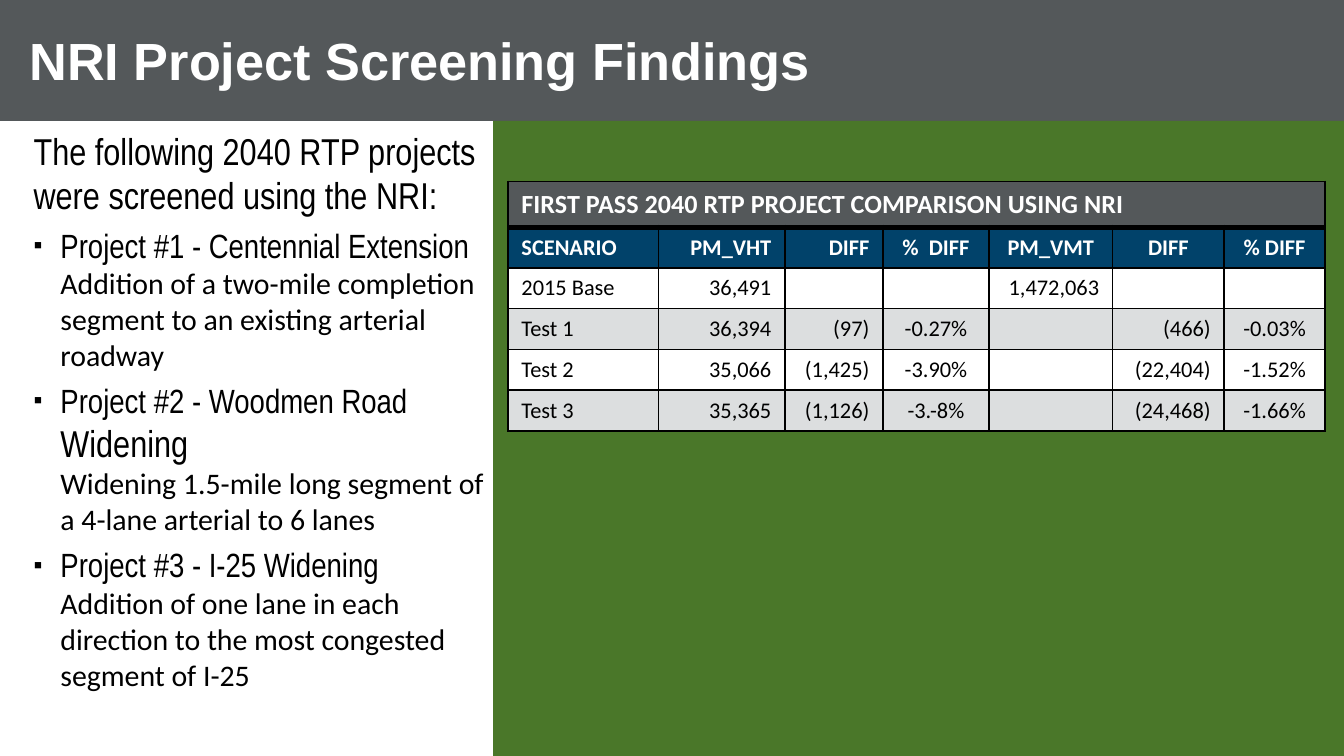
from lxml import etree
from pptx import Presentation
from pptx import util as u
from pptx.dml import color
from pptx.enum import shapes, text
from pptx.oxml import ns

COLORS = {
    "slate": "54585A",
    "green": "4A7729",
    "navy": "01426A",
    "band": "DCDEDF",
    "white": "FFFFFF",
    "black": "000000",
}
LEFT, CENTER, RIGHT = text.PP_ALIGN.LEFT, text.PP_ALIGN.CENTER, text.PP_ALIGN.RIGHT

INTRO = "The following 2040 RTP projects were screened using the NRI:"
FINDINGS = [
    ("intro", [(INTRO, 20, "Arial Narrow")]),
    ("bullet", [
        ("Project #1 - Centennial Extension ", 18, "Arial Narrow"),
        ("Addition of a two-mile completion segment to an existing arterial roadway", 16, "Calibri"),
    ]),
    ("bullet", [
        ("Project #2 - Woodmen Road ", 18, "Arial Narrow"),
        ("Widening", 20, "Arial Narrow"),
    ]),
    ("detail", [("Widening 1.5-mile long segment of a 4-lane arterial to 6 lanes", 16, "Calibri")]),
    ("bullet", [
        ("Project #3 - I-25 Widening ", 18, "Arial Narrow"),
        ("\n", 18, "Arial Narrow"),
        ("Addition of one lane in each direction to the most congested segment of I-25", 16, "Calibri"),
    ]),
]

TABLE_TITLE = "FIRST PASS 2040 RTP PROJECT COMPARISON USING NRI"
HEADERS = ["SCENARIO", "PM_VHT", "DIFF", "%  DIFF", "PM_VMT", "DIFF", "% DIFF"]
SCENARIOS = [
    ["2015 Base", "36,491", "", "", "1,472,063", "", ""],
    ["Test 1", "36,394", "(97)", "-0.27%", "", "(466)", "-0.03%"],
    ["Test 2", "35,066", "(1,425)", "-3.90%", "", "(22,404)", "-1.52%"],
    ["Test 3", "35,365", "(1,126)", "-3.-8%", "", "(24,468)", "-1.66%"],
]
COLUMN_WIDTHS = [1.12, 0.94, 0.73, 0.79, 0.92, 0.83, 0.75]
HEADER_ALIGNS = [LEFT, RIGHT, RIGHT, CENTER, CENTER, CENTER, CENTER]
VALUE_ALIGNS = [LEFT, RIGHT, RIGHT, CENTER, RIGHT, RIGHT, CENTER]


class SlideBuilder:
    def __init__(self, slide):
        self.slide = slide

    def paint(self, fill, name):
        fill.solid()
        fill.fore_color.rgb = color.RGBColor.from_string(COLORS[name])

    def style(self, span, size, font, name, bold=False):
        span.font.size = u.Pt(size)
        span.font.name = font
        span.font.bold = bold
        span.font.color.rgb = color.RGBColor.from_string(COLORS[name])

    def panel(self, left, top, width, height, name, behind=False):
        box = self.slide.shapes.add_shape(
            shapes.MSO_SHAPE.RECTANGLE, *map(u.Inches, (left, top, width, height)))
        self.paint(box.fill, name)
        box.line.fill.background()
        box.shadow.inherit = False
        if behind:
            box.element.getparent().insert(2, box.element)

    def place(self, box, left, top, width, height, anchor):
        box.left, box.top, box.width, box.height = map(u.Inches, (left, top, width, height))
        frame = box.text_frame
        frame.word_wrap = True
        frame.auto_size = text.MSO_AUTO_SIZE.NONE
        frame.vertical_anchor = anchor
        frame.margin_left = frame.margin_right = u.Inches(0.25)
        frame.margin_top = frame.margin_bottom = u.Inches(0.05)
        return frame

    def title(self, wording, *area):
        frame = self.place(self.slide.shapes.title, *area, text.MSO_ANCHOR.BOTTOM)
        frame.text = wording
        para = frame.paragraphs[0]
        para.alignment = LEFT
        para.line_spacing = u.Pt(28)
        self.style(para.runs[0], 28, "Arial", "white", True)

    def bullets(self, items, *area):
        frame = self.place(self.slide.placeholders[1], *area, text.MSO_ANCHOR.TOP)
        for index, (kind, spans) in enumerate(items):
            para = frame.add_paragraph() if index else frame.paragraphs[0]
            para.alignment = LEFT
            para.level = 1 if kind == "detail" else 0
            para.space_before = u.Pt(4 if kind == "bullet" else 0)
            self.indent(para, kind)
            for wording, size, font in spans:
                if wording == "\n":
                    para.add_line_break()
                    continue
                span = para.add_run()
                span.text = wording
                self.style(span, size, font, "black")

    def indent(self, para, kind):
        props = para._p.get_or_add_pPr()
        props.set("marL", str(0 if kind == "intro" else u.Inches(0.2)))
        props.set("indent", str(u.Inches(-0.2) if kind == "bullet" else 0))
        if kind == "bullet":
            etree.SubElement(props, ns.qn("a:buSzPct"), val="75000")
            etree.SubElement(props, ns.qn("a:buFont"), typeface="Arial")
            etree.SubElement(props, ns.qn("a:buChar"), char="▪")
        else:
            etree.SubElement(props, ns.qn("a:buNone"))

    def borders(self, cell, top, bottom):
        props = cell._tc.get_or_add_tcPr()
        for side, width in (("L", 1), ("R", 1), ("T", top), ("B", bottom)):
            line = etree.SubElement(props, ns.qn(f"a:ln{side}"), w=str(u.Pt(width)))
            fill = etree.SubElement(line, ns.qn("a:solidFill"))
            etree.SubElement(fill, ns.qn("a:srgbClr"), val=COLORS["black"])

    def cell(self, cell, wording, align, size, name, fill, bold, top=1, bottom=1):
        self.borders(cell, top, bottom)
        self.paint(cell.fill, fill)
        cell.vertical_anchor = text.MSO_ANCHOR.MIDDLE
        para = cell.text_frame.paragraphs[0]
        para.alignment = align
        if wording:
            para.text = wording
            self.style(para.runs[0], size, "Calibri", name, bold)
        else:
            etree.SubElement(para._p, ns.qn("a:endParaRPr"), sz=str(size * 100))

    def table(self, left, top, width, height):
        grid = self.slide.shapes.add_table(
            len(SCENARIOS) + 2, len(HEADERS), *map(u.Inches, (left, top, width, height))).table
        for column, column_width in zip(grid.columns, COLUMN_WIDTHS):
            column.width = u.Inches(column_width)
        for index, row in enumerate(grid.rows):
            row.height = u.Inches(0.3 if index else 0.34)
        grid.cell(0, 0).merge(grid.cell(0, len(HEADERS) - 1))
        for index, header in enumerate(HEADERS):
            heading = "" if index else TABLE_TITLE
            self.cell(grid.cell(0, index), heading, LEFT, 14, "white", "slate", True, bottom=3)
            self.cell(grid.cell(1, index), header, HEADER_ALIGNS[index], 12,
                      "white", "navy", True, top=3)
        for number, values in enumerate(SCENARIOS):
            fill = "band" if number % 2 else "white"
            for index, value in enumerate(values):
                self.cell(grid.cell(number + 2, index), value, VALUE_ALIGNS[index], 12,
                          "black", fill, False)


def main():
    deck = Presentation()
    deck.slide_width = u.Inches(10)
    deck.slide_height = deck.slide_width * 9 // 16
    page = SlideBuilder(deck.slides.add_slide(deck.slide_layouts[1]))
    page.panel(0, 0, 10, 0.9, "slate", behind=True)
    page.title("NRI Project Screening Findings", -0.03, 0, 6.78, 0.73)
    page.bullets(FINDINGS, 0, 0.9, 3.86, 1.53)
    page.panel(3.67, 0.9, 6.33, 4.75, "green")
    page.table(3.78, 1.35, 6.08, 1.85)
    deck.save("out.pptx")


if __name__ == "__main__":
    main()
